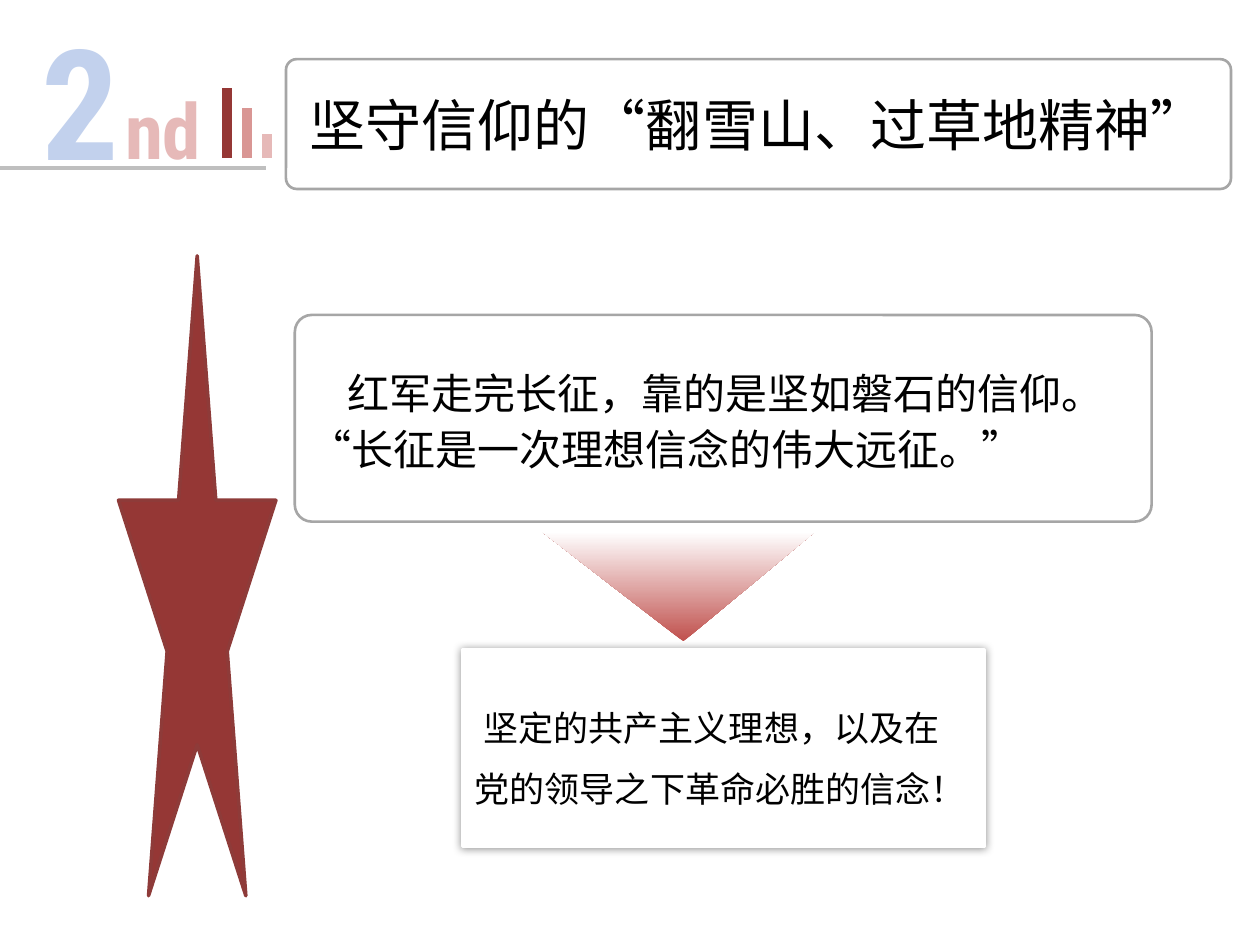
"""Builds the slide on the faith of the Long March."""
from lxml import etree
from pptx import Presentation
from pptx import util as u
from pptx.dml.color import RGBColor
from pptx.enum import shapes, text
from pptx.oxml import ns

BLACK = RGBColor(0x00, 0x00, 0x00)
WHITE = RGBColor(0xFF, 0xFF, 0xFF)
GREY = RGBColor(0xA6, 0xA6, 0xA6)
RULE_GREY = RGBColor(0xBF, 0xBF, 0xBF)
DARK_RED = RGBColor(0x95, 0x37, 0x35)
STAR_EDGE = RGBColor(0x8E, 0x3B, 0x39)
RED = RGBColor(0xC0, 0x50, 0x4D)
ROSE = RGBColor(0xD9, 0x96, 0x94)
PALE_ROSE = RGBColor(0xE6, 0xB9, 0xB8)
PALE_BLUE = RGBColor(0xC2, 0xD1, 0xED)

CJK_FONT = "Noto Sans CJK SC"
LATIN_FONT = "Calibri"
NUMBER_FONT = "Roboto Condensed"

TITLE = ["坚守信仰的“翻雪山、过草地精神”"]
STATEMENT = ["红军走完长征，靠的是坚如磐石的信仰。", "“长征是一次理想信念的伟大远征。”"]
CONCLUSION = ["坚定的共产主义理想，以及在党的领导之下革命必胜的信念！"]

ORDINAL = [
    ("2", (0.23, 0, 0.82, 1.58), 88, PALE_BLUE),
    ("nd", (0.87, 0.61, 0.85, 0.84), 44, PALE_ROSE),
]
BARS = [(0.55, DARK_RED), (0.39, ROSE), (0.19, PALE_ROSE)]
BAR_LEFT, BAR_STEP, BAR_BASE = 1.8, 0.16, 1.25

presentation = Presentation()
presentation.slide_width, presentation.slide_height = u.Inches(10), u.Inches(7.5)
slide = presentation.slides.add_slide(presentation.slide_layouts[6])


def add_shape(kind, box, fill=None, line=None, width=1.5):
    shape = slide.shapes.add_shape(kind, *map(u.Inches, box))
    shape.shadow.inherit = False
    if fill is None:
        shape.fill.background()
    else:
        shape.fill.solid()
        shape.fill.fore_color.rgb = fill
    if line is None:
        shape.line.fill.background()
    else:
        shape.line.color.rgb = line
        shape.line.width = u.Pt(width)
    return shape


def add_line(start, end, color, width):
    points = map(u.Inches, (*start, *end))
    line = slide.shapes.add_connector(shapes.MSO_CONNECTOR.STRAIGHT, *points)
    line.line.color.rgb = color
    line.line.width = u.Pt(width)
    etree.SubElement(line._element.spPr, ns.qn("a:effectLst"))


def write(shape, lines, size, font, color=BLACK, align=text.PP_ALIGN.LEFT,
          wrap=True, spacing=None, indent=0, bold=False):
    frame = shape.text_frame
    frame.text = "\n".join(lines)
    frame.word_wrap = wrap
    for paragraph in frame.paragraphs:
        paragraph.alignment = align
        if spacing:
            paragraph.line_spacing = u.Pt(spacing)
        run = paragraph.runs[0]
        run.font.size, run.font.name, run.font.bold = u.Pt(size), font, bold
        run.font.color.rgb = color
        east_asian = etree.SubElement(run.font._element, ns.qn("a:ea"))
        east_asian.set("typeface", CJK_FONT)
    if indent:
        properties = frame.paragraphs[0]._p.get_or_add_pPr()
        properties.set("indent", str(u.Inches(indent)))


def add_soft_shadow(shape):
    effects = shape._element.spPr.find(ns.qn("a:effectLst"))
    shadow = etree.SubElement(effects, ns.qn("a:outerShdw"),
                              blurRad=str(u.Pt(5)), dist="0", dir="0")
    color = etree.SubElement(shadow, ns.qn("a:srgbClr"), val=str(BLACK))
    etree.SubElement(color, ns.qn("a:alpha"), val="40000")


def add_rounded_box(box):
    shape = add_shape(shapes.MSO_SHAPE.ROUNDED_RECTANGLE, box, line=GREY)
    shape.adjustments[0] = 0.082
    return shape


title_box = add_rounded_box((2.27, 0.47, 7.5, 1.03))
write(title_box, TITLE, 32, CJK_FONT, align=text.PP_ALIGN.CENTER, wrap=False)

add_shape(shapes.MSO_SHAPE.STAR_5_POINT, (0.94, 2.03, 1.25, 5.08), DARK_RED, STAR_EDGE, 2)

statement_box = add_rounded_box((2.34, 2.5, 6.8, 1.64))
statement_box.text_frame.margin_left = u.Inches(0.08)
statement_box.text_frame.margin_right = 0
write(statement_box, STATEMENT, 24, LATIN_FONT, spacing=32, indent=0.3)

conclusion_box = add_shape(shapes.MSO_SHAPE.RECTANGLE, (3.67, 5.16, 4.14, 1.56), WHITE, WHITE, 2)
add_soft_shadow(conclusion_box)
write(conclusion_box, CONCLUSION, 20, CJK_FONT, spacing=35, indent=0.07)

pointer = add_shape(shapes.MSO_SHAPE.ISOSCELES_TRIANGLE, (4.3, 4.22, 2.17, 0.87))
pointer.adjustments[0] = 0.518
pointer._element.spPr.xfrm.set("flipV", "1")
pointer.fill.gradient()
pointer.fill.gradient_angle = 270
for stop, color, position in zip(pointer.fill.gradient_stops, (RED, WHITE), (0, 1)):
    stop.color.rgb = color
    stop.position = position

add_line((0, 1.33), (2.11, 1.33), RULE_GREY, 2.25)
for index, (height, color) in enumerate(BARS):
    x = BAR_LEFT + index * BAR_STEP
    add_line((x, BAR_BASE), (x, BAR_BASE - height), color, 6)

for label, box, size, color in ORDINAL:
    label_box = slide.shapes.add_textbox(*map(u.Inches, box))
    write(label_box, [label], size, NUMBER_FONT, color, text.PP_ALIGN.CENTER, wrap=False, bold=True)

presentation.save("out.pptx")
